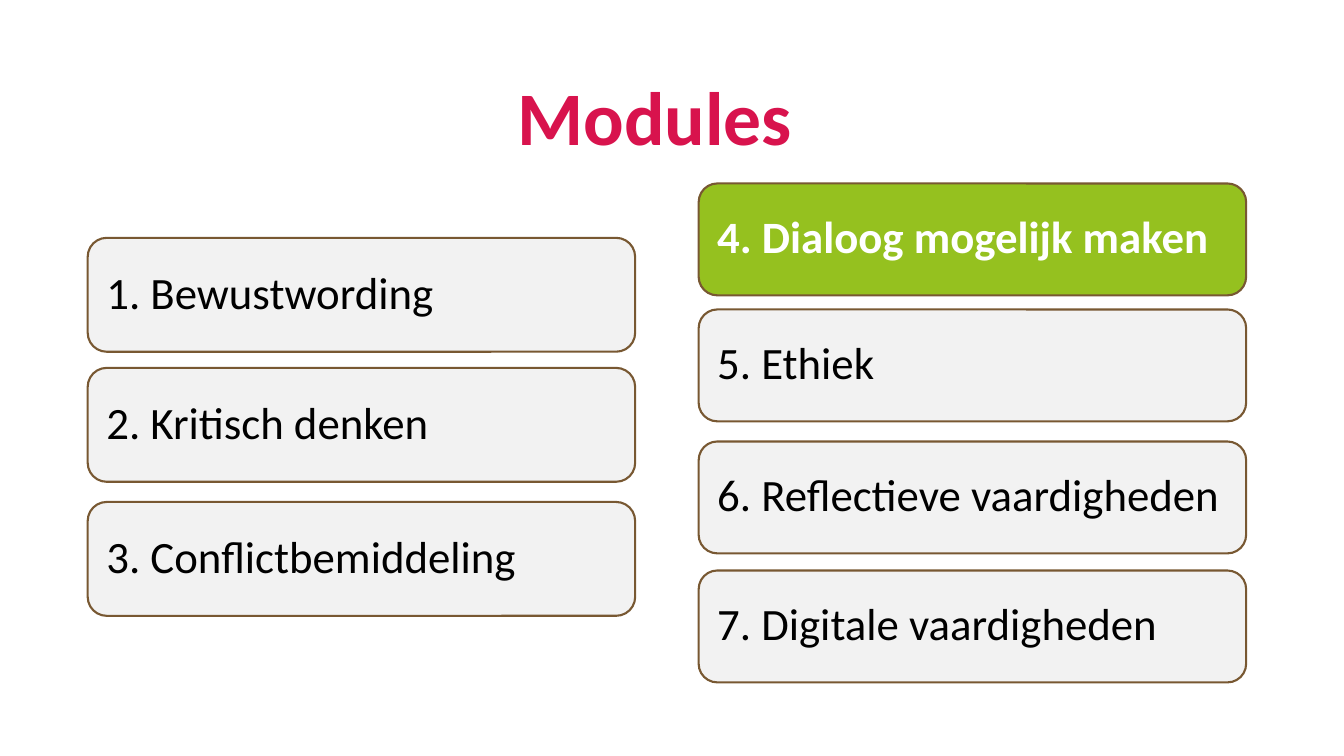
import pptx
import pptx.util
import pptx.dml.color
import pptx.enum.shapes
import pptx.enum.text

EMU_PER_PX = 9144
CRIMSON = pptx.dml.color.RGBColor(0xD8, 0x13, 0x4D)
GREEN = pptx.dml.color.RGBColor(0x95, 0xC1, 0x1F)
BROWN = pptx.dml.color.RGBColor(0x78, 0x58, 0x32)
LIGHT_GREY = pptx.dml.color.RGBColor(0xF2, 0xF2, 0xF2)
BLACK = pptx.dml.color.RGBColor(0, 0, 0)
WHITE = pptx.dml.color.RGBColor(0xFF, 0xFF, 0xFF)

CURRENT_MODULE = "4. Dialoog mogelijk maken"
FIRST_MODULES = [
    (0, "1. Bewustwording"),
    (129, "2. Kritisch denken"),
    (262, "3. Conflictbemiddeling"),
]
LATER_MODULES = [
    (0, CURRENT_MODULE),
    (125, "5. Ethiek"),
    (256, "6. Reflectieve vaardigheden"),
    (384, "7. Digitale vaardigheden"),
]


def px(length):
    return pptx.util.Emu(length * EMU_PER_PX)


def write_line(frame, wording, size, color, bold, alignment):
    frame.word_wrap = True
    line = frame.paragraphs[0]
    line.alignment = alignment
    line.line_spacing = 0.9
    run = line.add_run()
    run.text = wording
    run.font.name = "Calibri"
    run.font.size = pptx.util.Pt(size)
    run.font.bold = bold
    run.font.color.rgb = color


def add_title(slide, left, top, width, height):
    title = slide.shapes.add_textbox(px(left), px(top), px(width), px(height))
    title.text_frame.vertical_anchor = pptx.enum.text.MSO_ANCHOR.BOTTOM
    write_line(title.text_frame, "Modules", 54, CRIMSON, True,
               pptx.enum.text.PP_ALIGN.CENTER)


def add_module(slide, left, top, width, height, wording):
    is_current = wording == CURRENT_MODULE
    module = slide.shapes.add_shape(
        pptx.enum.shapes.MSO_SHAPE.ROUNDED_RECTANGLE,
        px(left), px(top), px(width), px(height))
    module.shadow.inherit = False
    module.fill.solid()
    module.fill.fore_color.rgb = GREEN if is_current else LIGHT_GREY
    module.line.color.rgb = BROWN
    module.line.width = pptx.util.Pt(1.5)
    frame = module.text_frame
    frame.margin_left = frame.margin_right = px(13)
    frame.margin_top = frame.margin_bottom = px(13)
    frame.vertical_anchor = pptx.enum.text.MSO_ANCHOR.MIDDLE
    write_line(frame, wording, 32, WHITE if is_current else BLACK, is_current,
               pptx.enum.text.PP_ALIGN.LEFT)


def add_module_column(slide, left, top, width, module_height, modules):
    for offset, wording in modules:
        add_module(slide, left, top + offset, width, module_height, wording)


def main():
    deck = pptx.Presentation()
    deck.slide_width = px(1333)
    deck.slide_height = px(750)
    slide = deck.slides.add_slide(deck.slide_layouts[6])
    add_title(slide, 1, -30, 1297, 195)
    add_module_column(slide, 87, 236, 543, 113, FIRST_MODULES)
    add_module_column(slide, 693, 182, 543, 111, LATER_MODULES)
    deck.save("out.pptx")


if __name__ == "__main__":
    main()
